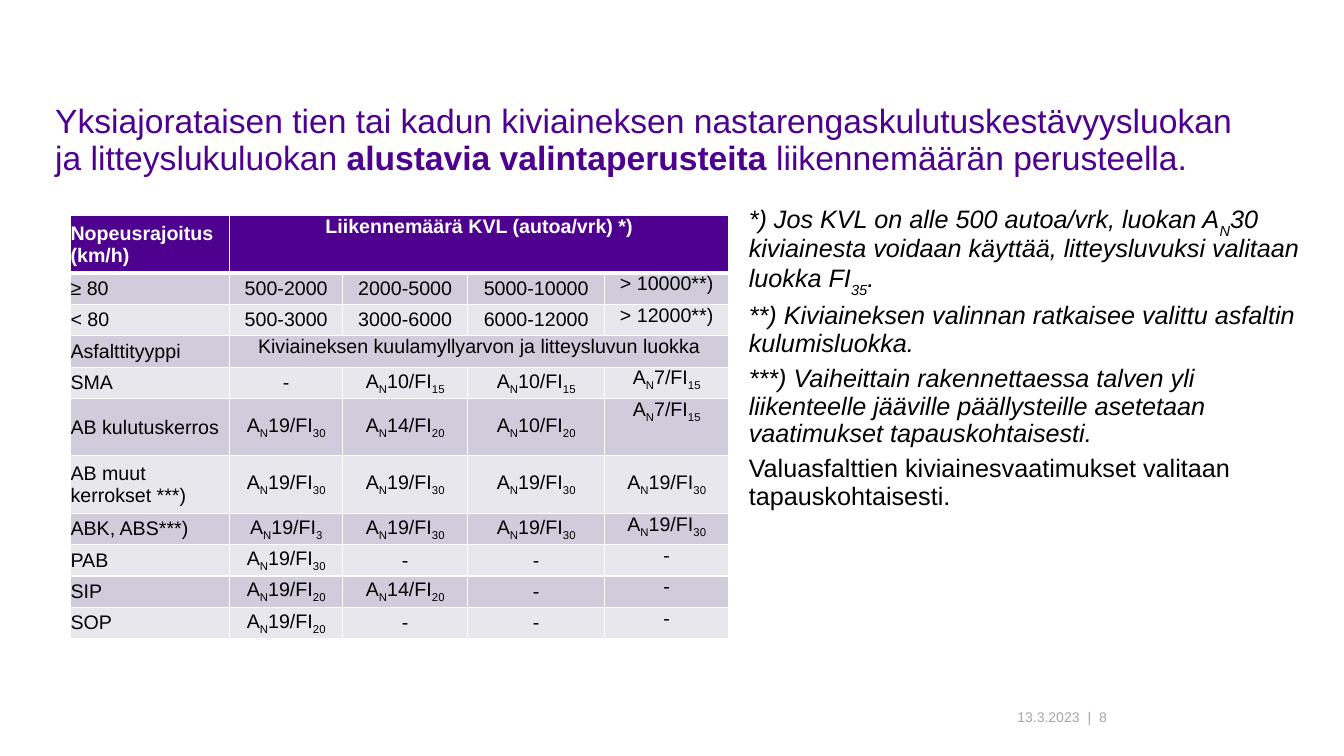
from lxml import etree
from pptx import Presentation
from pptx.dml.color import RGBColor
from pptx.enum import text
from pptx.oxml import ns
from pptx.util import Pt

# --- Content: "~" switches between plain and marked runs (bold or subscript) ---
TITLE = ("Yksiajorataisen tien tai kadun kiviaineksen nastarengaskulutuskestävyysluokan "
         "ja litteyslukuluokan ~alustavia valintaperusteita~ liikennemäärän perusteella.")

NOTES = [  # (text, italic)
    ("*) Jos KVL on alle 500 autoa/vrk, luokan A~N~30 kiviainesta voidaan käyttää, "
     "litteysluvuksi valitaan luokka FI~35~.", True),
    ("**) Kiviaineksen valinnan ratkaisee valittu asfaltin kulumisluokka.", True),
    ("***) Vaiheittain rakennettaessa talven yli liikenteelle jääville päällysteille "
     "asetetaan vaatimukset tapauskohtaisesti.", True),
    ("Valuasfalttien kiviainesvaatimukset valitaan tapauskohtaisesti.", False),
]


def grade(an, fi):
    return f"A~N~{an}/FI~{fi}"


# A row with two entries has its second cell spanning the rest
ROWS = [
    ["Nopeusrajoitus\n(km/h)", "Liikennemäärä KVL (autoa/vrk) *)"],
    ["≥ 80", "500-2000", "2000-5000", "5000-10000", "> 10000**)"],
    ["< 80", "500-3000", "3000-6000", "6000-12000", "> 12000**)"],
    ["Asfalttityyppi", "Kiviaineksen kuulamyllyarvon ja litteysluvun luokka"],
    ["SMA", "-", grade(10, 15), grade(10, 15), grade(7, 15)],
    ["AB kulutuskerros", grade(19, 30), grade(14, 20), grade(10, 20), grade(7, 15)],
    ["AB muut kerrokset ***)"] + [grade(19, 30)] * 4,
    ["ABK, ABS***)", grade(19, 3)] + [grade(19, 30)] * 3,
    ["PAB", grade(19, 30), "-", "-", "-"],
    ["SIP", grade(19, 20), grade(14, 20), "-", "-"],
    ["SOP", grade(19, 20), "-", "-", "-"],
]
COL_WIDTHS = [113.8, 80.6, 89.3, 97.9, 88.6]
ROW_HEIGHT, TALL_HEIGHT, TALL_ROWS = 22.4, 41, (0, 5, 6)
MIDDLE_LAST_ROW = 6  # the only row whose last cell is centred vertically

THEME = dict(font="Arial", purple="4E008E", black="000000", white="FFFFFF", grey="A6A6A6",
             bands=("E9E7EE", "D0CCDB"), title=24, body=18, cell=14, footer=10)

LEFT, CENTER, RIGHT = (text.PP_ALIGN.LEFT, text.PP_ALIGN.CENTER, text.PP_ALIGN.RIGHT)
TOP, MIDDLE, BOTTOM = (text.MSO_ANCHOR.TOP, text.MSO_ANCHOR.MIDDLE, text.MSO_ANCHOR.BOTTOM)


# --- Helpers ---
def write(p, marked, size, color, align=LEFT, bold=False, italic=False, sub=None):
    for i, part in enumerate(marked.split("~")):
        if not part:
            continue
        r = p.add_run()
        r.text = part
        if i % 2 and sub:
            r.font._element.set("baseline", str(sub)) if hasattr(r.font, "_element") \
                else r._r.get_or_add_rPr().set("baseline", str(sub))
        elif i % 2:
            r.font.bold = True
    p.alignment = align
    f = p.font
    f.name, f.size, f.bold, f.italic = THEME["font"], Pt(size), bold, italic
    f.color.rgb = RGBColor.from_string(color)


def add_box(slide, x, y, w, h, anchor=TOP, left=7.2, right=7.2):
    tf = slide.shapes.add_textbox(Pt(x), Pt(y), Pt(w), Pt(h)).text_frame
    tf.word_wrap = True
    tf.vertical_anchor = anchor
    tf.margin_left, tf.margin_right = Pt(left), Pt(right)
    return tf


def add_borders(cell, bottom):
    tcPr = cell._tc.get_or_add_tcPr()
    for side, width in (("L", 1), ("R", 1), ("T", 1), ("B", bottom)):
        ln = etree.SubElement(tcPr, ns.qn(f"a:ln{side}"), w=str(Pt(width)))
        fill = etree.SubElement(ln, ns.qn("a:solidFill"))
        etree.SubElement(fill, ns.qn("a:srgbClr"), val=THEME["white"])


def add_grade_table(slide):
    heights = [TALL_HEIGHT if i in TALL_ROWS else ROW_HEIGHT for i in range(len(ROWS))]
    last = len(COL_WIDTHS) - 1
    table = slide.shapes.add_table(len(ROWS), last + 1, Pt(50.4), Pt(154.1),
                                   Pt(sum(COL_WIDTHS)), Pt(sum(heights))).table
    table.first_row = table.horz_banding = False
    for col, w in zip(table.columns, COL_WIDTHS):
        col.width = Pt(w)
    for i, (row, h) in enumerate(zip(ROWS, heights)):
        table.rows[i].height = Pt(h)
        header, spanned = i == 0, len(row) == 2
        for j in range(last + 1):
            cell = table.cell(i, j)
            add_borders(cell, 3 if header else 1)
            cell.fill.solid()
            cell.fill.fore_color.rgb = RGBColor.from_string(
                THEME["purple"] if header else THEME["bands"][i % 2])
            cell.margin_left = cell.margin_right = cell.margin_top = cell.margin_bottom = 0
            at_top = (spanned and j == 1) or (j == last and i != MIDDLE_LAST_ROW)
            cell.vertical_anchor = TOP if at_top else MIDDLE
        if spanned:
            table.cell(i, 1).merge(table.cell(i, last))
        for j, entry in enumerate(row):
            tf = table.cell(i, j).text_frame
            for k, line in enumerate(entry.split("\n")):
                p = tf.add_paragraph() if k else tf.paragraphs[0]
                write(p, line, THEME["cell"], THEME["white" if header else "black"],
                      CENTER if j else LEFT, bold=header, sub=-25000)


def main():
    prs = Presentation()
    prs.slide_width, prs.slide_height = Pt(960), Pt(540)
    slide = prs.slides.add_slide(prs.slide_layouts[6])

    # Title
    p = add_box(slide, 32.4, 71.3, 856.8, 51.1).paragraphs[0]
    p.line_spacing = 0.9
    write(p, TITLE, THEME["title"], THEME["purple"])

    # Notes beside the table
    tf = add_box(slide, 527.8, 141.8, 408.2, 342.7)
    for i, (note, italic) in enumerate(NOTES):
        p = tf.add_paragraph() if i else tf.paragraphs[0]
        p.line_spacing, p.space_after = 0.9, Pt(6)
        write(p, note, THEME["body"], THEME["black"], italic=italic, sub=-30000)

    # Footer: date and page number
    p = add_box(slide, 710.6, 501.1, 60.5, 20.2, BOTTOM, 0, 0).paragraphs[0]
    write(p, "13.3.2023", THEME["footer"], THEME["grey"], RIGHT)
    p = add_box(slide, 776.9, 501.1, 29.5, 20.2, BOTTOM, 0).paragraphs[0]
    tabs = etree.SubElement(p._p.get_or_add_pPr(), ns.qn("a:tabLst"))
    etree.SubElement(tabs, ns.qn("a:tab"), pos=str(Pt(8.2)), algn="l")
    write(p, "|\t8", THEME["footer"], THEME["grey"])

    add_grade_table(slide)
    prs.save("out.pptx")


if __name__ == "__main__":
    main()
